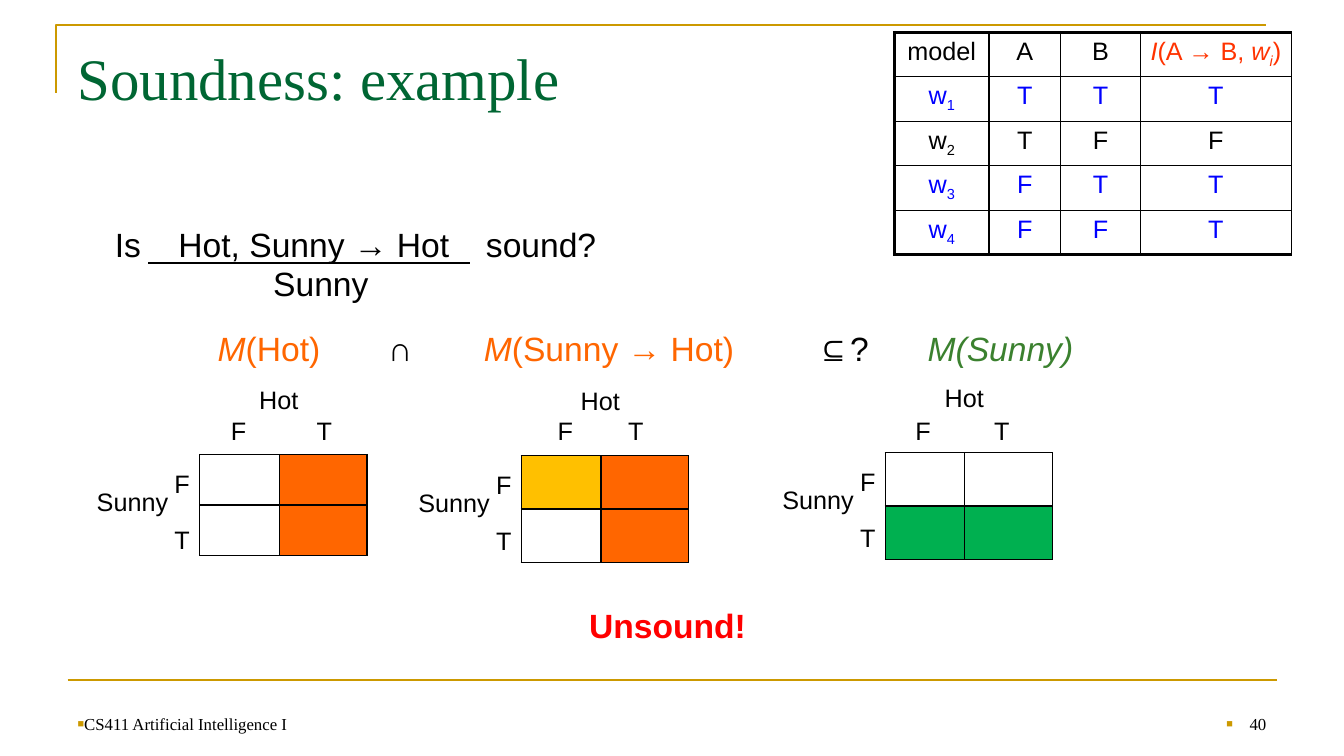
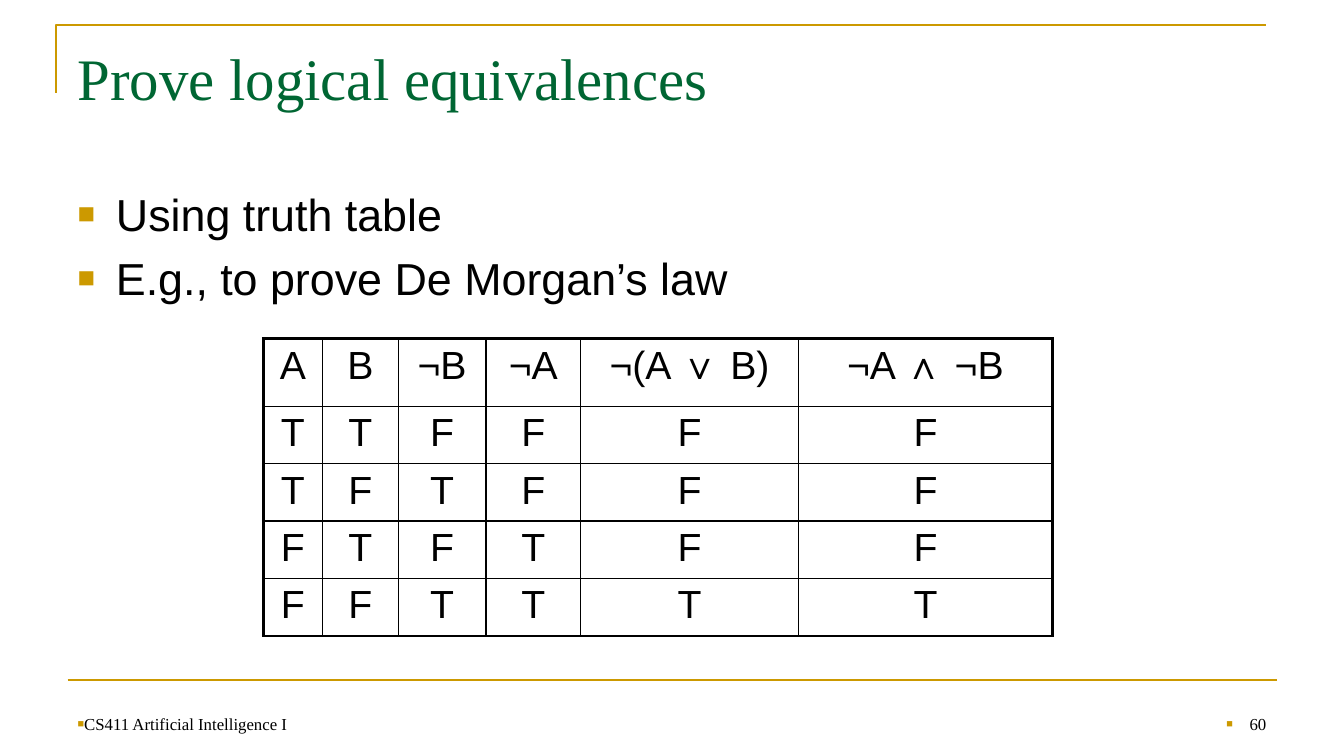
from dataclasses import dataclass, field
from typing import NamedTuple

from lxml.etree import SubElement as Sub
from pptx import Presentation
from pptx.dml.color import RGBColor as Rgb
from pptx.enum.text import MSO_ANCHOR as Anchor, PP_ALIGN as Align
from pptx.oxml.ns import qn
from pptx.util import Inches, Pt


@dataclass(frozen=True)
class Theme:
    gold: str = "CC9900"
    title: str = "006633"
    ink: str = "000000"
    blue: str = "0000FF"
    red: str = "FF0000"
    rust: str = "FF3300"
    orange: str = "FF6600"
    amber: str = "FFC000"
    leaf: str = "3B812F"
    green: str = "00B050"
    sans: str = "Arial"
    serif: str = "Times New Roman"
    huge: float = 42
    large: float = 32
    big: float = 28
    mid: float = 24
    base: float = 18
    small: float = 12
    thin: float = 1
    rule: float = 1.5
    thick: float = 2.25


T = Theme()


class Run(NamedTuple):
    text: str
    color: str = T.ink
    italic: bool = False
    bold: bool = False
    sub: bool = False


class Bullet(NamedTuple):
    left: float = 0
    hang: float = 0


class Piece(NamedTuple):
    left: float
    top: float
    runs: list[Run]


class Grid(NamedTuple):
    """Two by two model grid: columns are Hot, rows are Sunny."""
    left: float
    top: float
    row: float
    heads: tuple[float, float]
    fills: list[list[str]]


@dataclass
class Table:
    left: float
    top: float
    cols: list[float]
    rows: list[float]
    cells: list[list[list[Run]]]
    size: float = T.base
    fills: list[list[str]] = field(default_factory=list)
    edges: str = ""  # outer sides drawn thick


# Text helpers
def write(para, runs: list[Run], size: float, font: str = T.sans) -> None:
    for item in runs:
        run = para.add_run()
        run.text = item.text
        style = {"name": font, "size": Pt(size),
                 "bold": item.bold, "italic": item.italic}
        for key, value in style.items():
            setattr(run.font, key, value)
        run.font.color.rgb = Rgb.from_string(item.color)
        if item.sub:
            run._r.get_or_add_rPr().set("baseline", "-25000")


def mark(para, bullet: Bullet) -> None:
    props = para._p.get_or_add_pPr()
    props.set("marL", str(Inches(bullet.left)))
    props.set("indent", str(-Inches(bullet.hang)))
    Sub(Sub(props, qn("a:buClr")), qn("a:srgbClr"), val=T.gold)
    Sub(props, qn("a:buSzPct"), val="65000")
    Sub(props, qn("a:buFont"), typeface=T.sans)
    Sub(props, qn("a:buChar"), char="■")


def put(slide, left: float, top: float, width: float, high: float,
        lines: list[list[Run]], size: float, font: str = T.sans,
        align=Align.LEFT, anchor=Anchor.TOP, gap: float = 0,
        bullet: Bullet | None = None, wrap: bool = True) -> None:
    box = slide.shapes.add_textbox(*map(Inches, (left, top, width, high)))
    frame = box.text_frame
    style = {"word_wrap": wrap, "vertical_anchor": anchor, "margin_left": 0,
             "margin_right": 0, "margin_top": 0, "margin_bottom": 0}
    for key, value in style.items():
        setattr(frame, key, value)
    for i, runs in enumerate(lines):
        para = frame.add_paragraph() if i else frame.paragraphs[0]
        para.alignment = align
        para.space_after = Pt(gap)
        if bullet:
            mark(para, bullet)
        write(para, runs, size, font)


def label(slide, left: float, top: float, text: str) -> None:
    put(slide, left, top, 0.8, 0.3, [[Run(text)]], T.base, wrap=False)


# Lines and the shared frame
def stroke(shape, color: str) -> None:
    shape.line.color.rgb = Rgb.from_string(color)
    shape.line.width = Pt(T.rule)


def rule(slide, left: float, right: float, top: float, color: str) -> None:
    line = slide.shapes.add_connector(
        1, Inches(left), Inches(top), Inches(right), Inches(top))
    stroke(line, color)
    Sub(line._element.spPr, qn("a:effectLst"))


def start(deck, title: str, page: str):
    slide = deck.slides.add_slide(deck.slide_layouts[6])
    pen = slide.shapes.build_freeform(Inches(0.56), Inches(0.92))
    pen.add_line_segments([(Inches(0.56), Inches(0.25)),
                           (Inches(12.56), Inches(0.25))], close=False)
    bend = pen.convert_to_shape()
    bend.fill.background()
    bend.shadow.inherit = False
    stroke(bend, T.gold)
    rule(slide, 0.67, 12.67, 6.75, T.gold)
    put(slide, 0.77, 0.41, 11.8, 0.8, [[Run(title, T.title)]],
        T.huge, T.serif)
    put(slide, 0.77, 6.88, 7.9, 0.4, [[Run("CS411 Artificial Intelligence I")]],
        T.small, T.serif, anchor=Anchor.BOTTOM, bullet=Bullet())
    put(slide, 9.66, 6.88, 2.9, 0.4, [[Run(page)]], T.small, T.serif,
        Align.RIGHT, Anchor.BOTTOM, bullet=Bullet(0.23, 0.23))
    return slide


# Tables
def border(cell, thick: set[str]) -> None:
    props = cell._tc.get_or_add_tcPr()
    for side in "LRTB":
        width = T.thick if side in thick else T.thin
        line = Sub(props, qn(f"a:ln{side}"), w=str(Pt(width)))
        Sub(Sub(line, qn("a:solidFill")), qn("a:srgbClr"), val=T.ink)


def draw(slide, data: Table) -> None:
    rows, cols = len(data.rows), len(data.cols)
    table = slide.shapes.add_table(
        rows, cols, Inches(data.left), Inches(data.top),
        Inches(sum(data.cols)), Inches(sum(data.rows))).table
    table.first_row = table.horz_banding = False
    for c, width in enumerate(data.cols):
        table.columns[c].width = Inches(width)
    for r, high in enumerate(data.rows):
        table.rows[r].height = Inches(high)
        for c in range(cols):
            cell = table.cell(r, c)
            cell.margin_left = cell.margin_right = Inches(0.05)
            outer = {"L": c == 0, "R": c == cols - 1,
                     "T": r == 0, "B": r == rows - 1}
            border(cell, {s for s in data.edges if outer[s]})
            fill = data.fills[r][c] if data.fills else ""
            if fill:
                cell.fill.solid()
                cell.fill.fore_color.rgb = Rgb.from_string(fill)
            else:
                cell.fill.background()
            if data.cells:
                para = cell.text_frame.paragraphs[0]
                para.alignment = Align.CENTER
                write(para, data.cells[r][c], data.size)


def plot(slide, grid: Grid) -> None:
    x, y = grid.left, grid.top
    draw(slide, Table(x, y, [0.79, 0.87], [grid.row] * 2, [],
                      fills=grid.fills))
    label(slide, x - 1.02, y + 0.31, "Sunny")
    label(slide, x + 0.59, y - 0.7, "Hot")
    put(slide, x - 0.25, y + 0.14, 0.25, 0.86, [[Run("F")], [Run("T")]],
        T.base, gap=18)
    for text, shift in zip("FT", grid.heads):
        label(slide, x + shift, 4.12, text)


# Slide: soundness
def sound(deck) -> None:
    slide = start(deck, "Soundness: example", "40")
    pieces = [
        Piece(1.14, 2.22, [Run("Is")]),
        Piece(1.77, 2.22, [Run("Hot, Sunny → Hot")]),
        Piece(4.82, 2.22, [Run("sound?")]),
        Piece(2.71, 2.61, [Run("Sunny")]),
        Piece(2.16, 3.25, [Run("M", T.orange, True), Run("(Hot)", T.orange)]),
        Piece(3.85, 3.25, [Run("∩")]),
        Piece(4.8, 3.25, [Run("M", T.orange, True),
                          Run("(Sunny → Hot)", T.orange)]),
        Piece(8.1, 3.25, [Run("⊆?")]),
        Piece(9.2, 3.25, [Run("M(Sunny)", T.leaf, True)]),
    ]
    for piece in pieces:
        put(slide, piece.left, piece.top, 2.8, 0.4, [piece.runs], T.mid,
            wrap=False)
    rule(slide, 1.47, 4.66, 2.61, T.ink)
    put(slide, 0.62, 6, 12, 0.4, [[Run("Unsound!", T.red, bold=True)]],
        T.mid, align=Align.CENTER)

    # Truth table of the implication
    head = [[Run(text)] for text in ("model", "A", "B")]
    head.append([Run("I", T.rust, True), Run("(A → B, ", T.rust),
                 Run("w", T.rust, True), Run("i", T.rust, True, sub=True),
                 Run(")", T.rust)])
    cells = [head]
    for n, values in enumerate(("TTT", "TFF", "FTT", "FFT"), 1):
        color = T.blue if values[-1] == "T" else T.ink
        cells.append([[Run("w", color), Run(str(n), color, sub=True)],
                      *([Run(v, color)] for v in values)])
    draw(slide, Table(8.87, 0.32, [0.94, 0.71, 0.79, 1.5], [0.44] * 5,
                      cells, edges="LTB"))

    # Model grids
    grids = [
        Grid(1.98, 4.51, 0.5, (0.31, 1.16), [["", T.orange]] * 2),
        Grid(5.17, 4.52, 0.53, (0.36, 1.06),
             [[T.amber, T.orange], ["", T.orange]]),
        Grid(8.78, 4.49, 0.53, (0.3, 1.08), [["", ""], [T.green] * 2]),
    ]
    for grid in grids:
        plot(slide, grid)


# Slide: equivalences
def prove(deck) -> None:
    slide = start(deck, "Prove logical equivalences", "60")
    put(slide, 0.77, 1.85, 11.8, 1.3,
        [[Run("Using truth table")], [Run("E.g., to prove De Morgan’s law")]],
        T.large, gap=7.4, bullet=Bullet(0.38, 0.38))
    rows = [("A", "B", "¬B", "¬A", "¬(A ∨ B)", "¬A ∧ ¬B"),
            "TTFFFF", "TFTFFF", "FTFTFF", "FFTTTT"]
    cells = [[[Run(text)] for text in row] for row in rows]
    draw(slide, Table(2.61, 3.36, [0.59, 0.75, 0.87, 0.94, 2.16, 2.52],
                      [0.67] + [0.57] * 4, cells, T.big, edges="LRTB"))


def main() -> None:
    deck = Presentation()
    deck.slide_width, deck.slide_height = Inches(13.33), Inches(7.5)
    sound(deck)
    prove(deck)
    deck.save("out.pptx")


if __name__ == "__main__":
    main()
